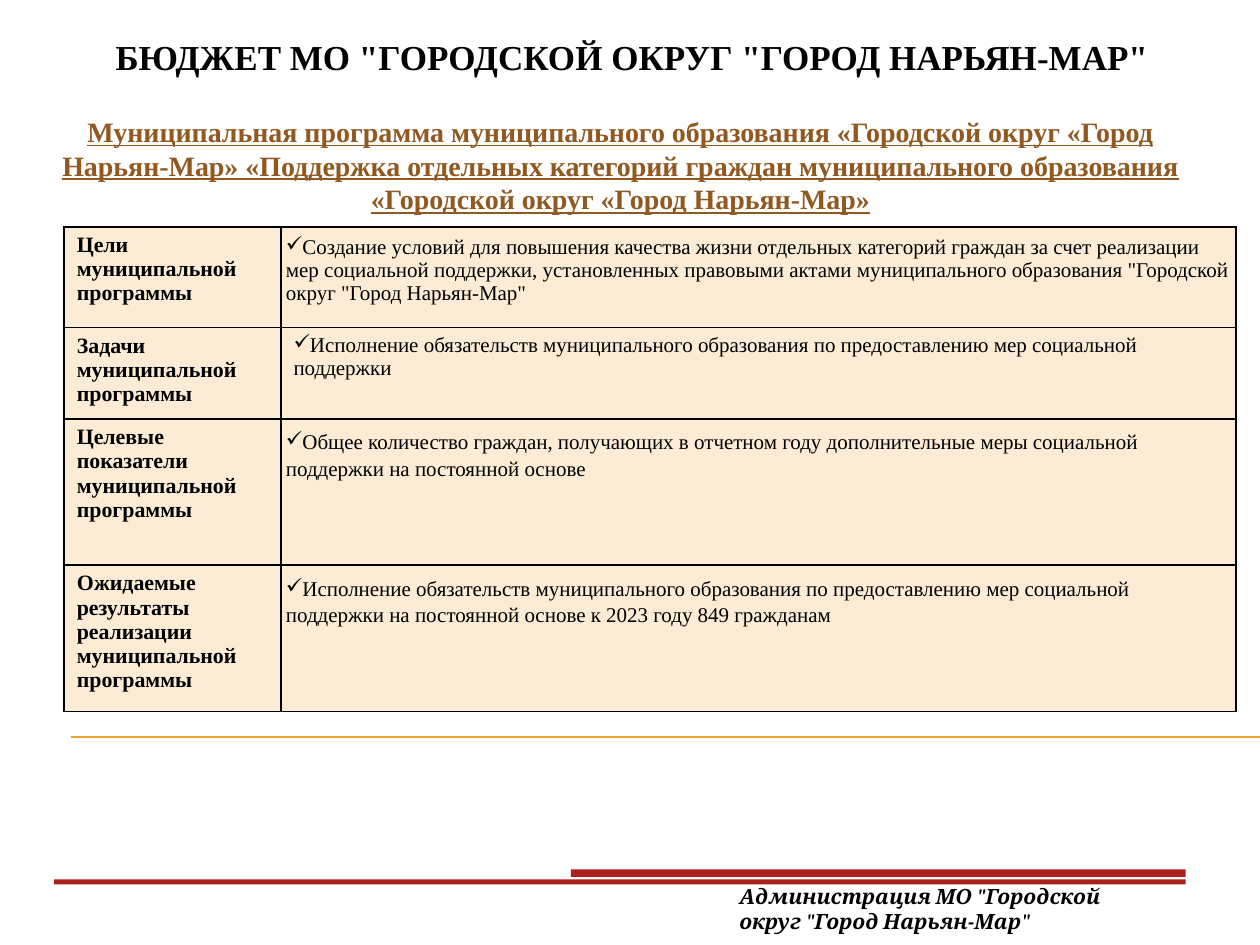
from dataclasses import dataclass

from lxml import etree
from pptx import Presentation
from pptx.dml.color import RGBColor
from pptx.enum.shapes import MSO_CONNECTOR, MSO_SHAPE
from pptx.enum.text import MSO_ANCHOR, MSO_AUTO_SIZE, PP_ALIGN
from pptx.oxml.ns import qn
from pptx.util import Inches, Pt

RECTANGLE = MSO_SHAPE.RECTANGLE
STRAIGHT = MSO_CONNECTOR.STRAIGHT
CENTER, LEFT = PP_ALIGN.CENTER, PP_ALIGN.LEFT
TOP = MSO_ANCHOR.TOP
NO_AUTOSIZE = MSO_AUTO_SIZE.NONE
COLORS = {
    "text": "000000",
    "subtitle": "91581F",
    "cell": "FCECD5",
    "rule": "F0A22E",
    "bar": "AD1F1F",
}
SERIF = "Times New Roman"
TITLE_ONLY_LAYOUT = 5


@dataclass
class TextStyle:
    size: float
    font: str = SERIF
    color: str = "text"
    bold: bool = False
    italic: bool = False
    underline: bool = False


@dataclass
class ProgramRow:
    label: str
    detail: str
    height: float
    side_inset: float = 0.04
    vertical_inset: float = 0.07
    line_spacing: float = 1.0


@dataclass
class Bar:
    left: float
    top: float
    width: float
    height: float


TITLE_STYLE = TextStyle(20, bold=True)
SUBTITLE_STYLE = TextStyle(16, color="subtitle", bold=True, underline=True)
LABEL_STYLE = TextStyle(12.5, bold=True)
DETAIL_STYLE = TextStyle(12)
FOOTER_STYLE = TextStyle(12, font="Cambria", bold=True, italic=True)

COLUMN_WIDTHS = (1.72, 7.58)
ROWS = (
    ProgramRow(
        "Цели муниципальной программы",
        "Создание условий для повышения качества жизни отдельных категорий граждан "
        "за счет реализации мер социальной поддержки, установленных правовыми актами "
        "муниципального образования \"Городской округ \"Город Нарьян-Мар\"",
        0.8),
    ProgramRow(
        "Задачи муниципальной программы",
        "Исполнение обязательств муниципального образования по предоставлению мер "
        "социальной поддержки",
        0.69, side_inset=0.1, vertical_inset=0.05),
    ProgramRow(
        "Целевые показатели муниципальной программы",
        "Общее количество граждан, получающих в отчетном году дополнительные меры "
        "социальной поддержки на постоянной основе",
        1.16, line_spacing=1.15),
    ProgramRow(
        "Ожидаемые результаты реализации муниципальной программы",
        "Исполнение обязательств муниципального образования по предоставлению мер "
        "социальной поддержки на постоянной основе к 2023 году 849 гражданам",
        1.16, line_spacing=1.15),
)
BARS = (Bar(4.53, 6.9, 4.88, 0.06), Bar(0.43, 6.98, 8.98, 0.04))


def color(name: str) -> RGBColor:
    return RGBColor.from_string(COLORS[name])


def write(text_frame, text: str, style: TextStyle, alignment=LEFT):
    text_frame.word_wrap = True
    paragraph = text_frame.paragraphs[0]
    paragraph.alignment = alignment
    run = paragraph.add_run()
    run.text = text
    font = run.font
    font.name, font.size = style.font, Pt(style.size)
    font.bold, font.italic, font.underline = style.bold, style.italic, style.underline
    font.color.rgb = color(style.color)
    return paragraph


def add_text(slide, left: float, top: float, width: float, height: float,
             text: str, style: TextStyle, alignment=LEFT) -> None:
    box = slide.shapes.add_textbox(
        Inches(left), Inches(top), Inches(width), Inches(height))
    write(box.text_frame, text, style, alignment)


def add_check_bullet(paragraph) -> None:
    properties = paragraph._p.get_or_add_pPr()
    properties.set("marL", "0")
    properties.set("indent", "0")
    etree.SubElement(properties, qn("a:buChar")).set("char", "✓")


def format_cell(cell) -> None:
    cell.fill.solid()
    cell.fill.fore_color.rgb = color("cell")
    properties = cell._tc.get_or_add_tcPr()
    # Borders come before the fill in the cell properties
    for position, side in enumerate(("a:lnL", "a:lnR", "a:lnT", "a:lnB")):
        border = etree.Element(qn(side), w=str(Pt(1)))
        fill = etree.SubElement(border, qn("a:solidFill"))
        etree.SubElement(fill, qn("a:srgbClr")).set("val", COLORS["text"])
        properties.insert(position, border)


def add_program_table(slide) -> None:
    table = slide.shapes.add_table(
        len(ROWS), len(COLUMN_WIDTHS), Inches(0.51), Inches(1.8),
        Inches(sum(COLUMN_WIDTHS)), Inches(sum(row.height for row in ROWS))).table
    for column, width in zip(table.columns, COLUMN_WIDTHS):
        column.width = Inches(width)
    for index, row in enumerate(ROWS):
        table.rows[index].height = Inches(row.height)
        label, detail = table.cell(index, 0), table.cell(index, 1)
        write(label.text_frame, row.label, LABEL_STYLE)
        paragraph = write(detail.text_frame, row.detail, DETAIL_STYLE)
        paragraph.line_spacing = row.line_spacing
        add_check_bullet(paragraph)
        detail.margin_left = detail.margin_right = Inches(row.side_inset)
        detail.margin_top = detail.margin_bottom = Inches(row.vertical_inset)
        format_cell(label)
        format_cell(detail)


def add_bar(slide, bar: Bar) -> None:
    shape = slide.shapes.add_shape(
        RECTANGLE, Inches(bar.left), Inches(bar.top),
        Inches(bar.width), Inches(bar.height))
    shape.shadow.inherit = False
    shape.fill.solid()
    shape.fill.fore_color.rgb = color("bar")
    shape.line.fill.background()


def add_rule(slide) -> None:
    rule = slide.shapes.add_connector(
        STRAIGHT, Inches(0.56), Inches(5.85), Inches(10), Inches(5.85))
    rule.line.color.rgb = color("rule")
    rule.line.width = Pt(0.75)
    etree.SubElement(rule._element.spPr, qn("a:effectLst"))


def main() -> None:
    presentation = Presentation()
    presentation.slide_width, presentation.slide_height = Inches(10), Inches(7.5)
    slide = presentation.slides.add_slide(
        presentation.slide_layouts[TITLE_ONLY_LAYOUT])

    # Heading
    add_rule(slide)
    title = slide.shapes.title
    title.left, title.top = Inches(0.39), Inches(0.23)
    title.width, title.height = Inches(9.25), Inches(1.34)
    title.text_frame.vertical_anchor = TOP
    title.text_frame.auto_size = NO_AUTOSIZE
    write(title.text_frame, "БЮДЖЕТ МО \"ГОРОДСКОЙ ОКРУГ \"ГОРОД НАРЬЯН-МАР\"",
          TITLE_STYLE, CENTER)
    add_text(slide, 0.16, 0.86, 9.53, 0.47,
             "Муниципальная программа муниципального образования «Городской округ "
             "«Город Нарьян-Мар» «Поддержка отдельных категорий граждан "
             "муниципального образования «Городской округ «Город Нарьян-Мар»",
             SUBTITLE_STYLE, CENTER)

    # Program description
    add_program_table(slide)

    # Footer
    for bar in BARS:
        add_bar(slide, bar)
    add_text(slide, 5.77, 6.96, 3.49, 0.5,
             "Администрация МО \"Городской округ \"Город Нарьян-Мар\"", FOOTER_STYLE)

    presentation.save("out.pptx")


if __name__ == "__main__":
    main()
